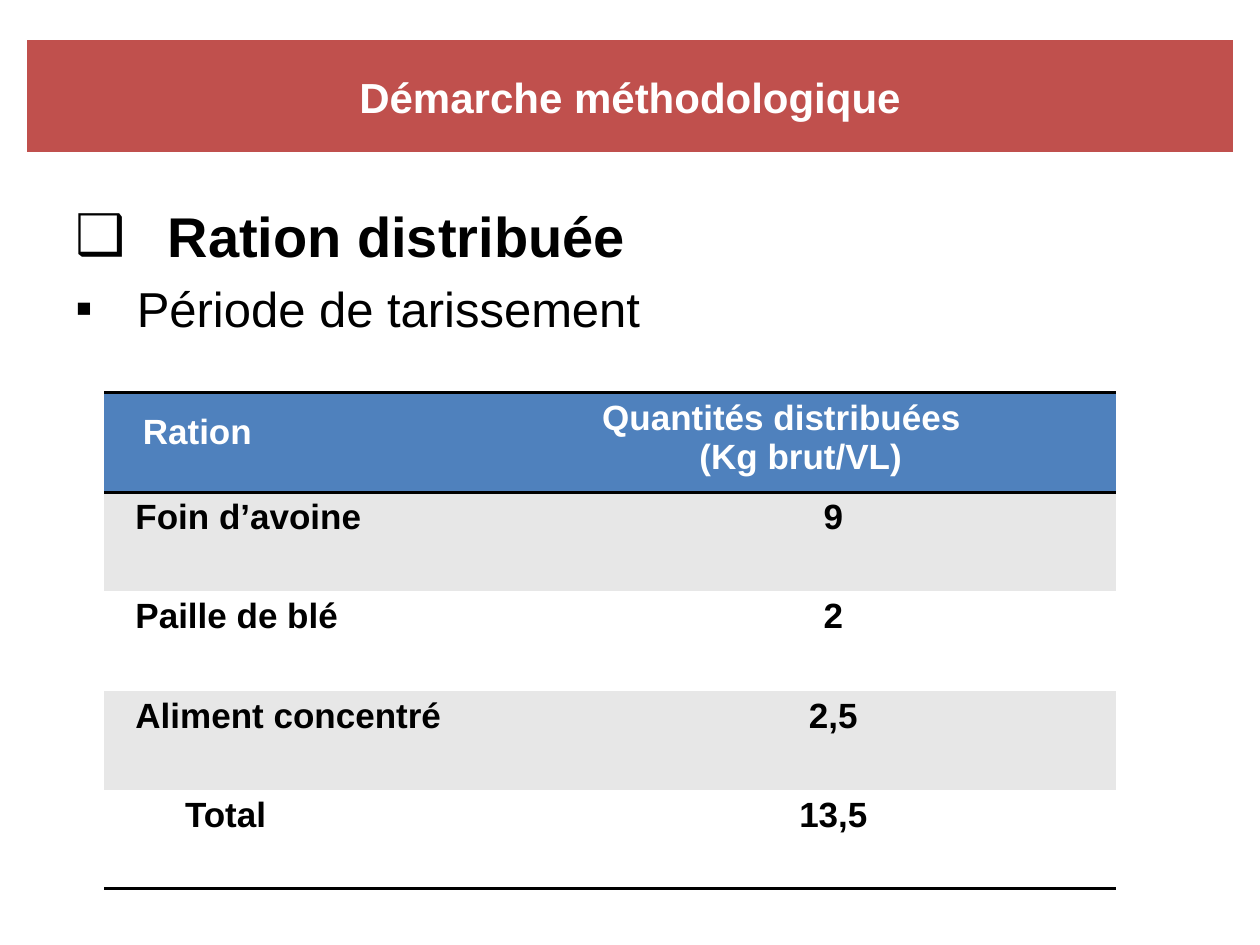
from lxml import etree
from pptx import Presentation
from pptx.dml.color import RGBColor
from pptx.enum.text import MSO_ANCHOR, PP_ALIGN
from pptx.oxml.ns import qn
from pptx.util import Cm, Pt

LEFT, CENTER = PP_ALIGN.LEFT, PP_ALIGN.CENTER
MIDDLE = MSO_ANCHOR.MIDDLE
TITLE_ONLY = 5
FONT = "Arial"
COLORS = {
    "banner": "C0504D",
    "header": "4F81BD",
    "band": "E7E7E7",
    "white": "FFFFFF",
    "black": "000000",
}

# Each ration row: name, its indent in cm, quantity
RATIONS = [
    ("Foin d’avoine", 0.45, "9"),
    ("Paille de blé", 0.45, "2"),
    ("Aliment concentré", 0.45, "2,5"),
    ("Total", 1.45, "13,5"),
]


def color(name):
    return RGBColor.from_string(COLORS[name])


def add_node(parent, tag, **attributes):
    return etree.SubElement(parent, qn(tag), attributes)


def add_color(parent, name):
    fill = add_node(parent, "a:solidFill")
    return add_node(fill, "a:srgbClr", val=COLORS[name])


def place(shape, box):
    shape.left, shape.top, shape.width, shape.height = (Cm(value) for value in box)


def format_para(para, size, color_name, bold=True, align=LEFT):
    para.alignment = align
    for span in para.runs:
        span.font.name = FONT
        span.font.size = Pt(size)
        span.font.bold = bold
        span.font.color.rgb = color(color_name)


def indent_para(para, indent, hanging=0):
    properties = para._p.get_or_add_pPr()
    properties.set("marL", str(Cm(indent)))
    properties.set("indent", str(-Cm(hanging)))
    return properties


def fill_banner(title, box):
    place(title, box)
    title.fill.solid()
    title.fill.fore_color.rgb = color("banner")
    title.line.color.rgb = color("white")
    title.line.width = Pt(3)
    effects = add_node(title._element.spPr, "a:effectLst")
    shadow = add_node(effects, "a:outerShdw", blurRad=str(Pt(3.1)),
                      dist=str(Pt(1.6)), dir="5400000", rotWithShape="0")
    add_node(add_color(shadow, "black"), "a:alpha", val="38000")
    frame = title.text_frame
    frame.text = "Démarche méthodologique"
    frame.vertical_anchor = MIDDLE
    format_para(frame.paragraphs[0], 24, "white", align=CENTER)


def add_headings(page, box):
    frame = page.shapes.add_textbox(*(Cm(value) for value in box)).text_frame
    frame.word_wrap = True
    frame.text = "Ration distribuée\nPériode de tarissement"
    styles = [("❑", 32, True, 1.86), ("▪", 28, False, 1.24)]
    for para, (bullet, size, bold, indent) in zip(frame.paragraphs, styles):
        format_para(para, size, "black", bold)
        para.space_before = Pt(size * 0.2)
        properties = indent_para(para, indent, indent)
        add_node(properties, "a:buFont", typeface=FONT)
        add_node(properties, "a:buChar", char=bullet)


def set_borders(cell, ruled_sides):
    properties = cell._tc.get_or_add_tcPr()
    for position, side in enumerate(("L", "R", "T", "B")):
        line = etree.Element(qn("a:ln" + side), w=str(Pt(2)))
        if side in ruled_sides:
            add_color(line, "black")
        else:
            add_node(line, "a:noFill")
        properties.insert(position, line)


def fill_cell(cell, text, fill, text_color, indents=(0,), align=LEFT, borders=""):
    cell.fill.solid()
    cell.fill.fore_color.rgb = color(fill)
    cell.margin_left = cell.margin_right = Cm(0.18)
    cell.margin_top, cell.margin_bottom = Cm(0.12), 0
    cell.text = text
    for para, indent in zip(cell.text_frame.paragraphs, indents):
        format_para(para, 20, text_color, align=align)
        indent_para(para, indent)
    set_borders(cell, borders)


def add_ration_table(page, box):
    row_count = len(RATIONS) + 1
    table = page.shapes.add_table(row_count, 2, *(Cm(value) for value in box)).table
    table.columns[0].width = Cm(9)
    table.columns[1].width = Cm(box[2] - 9)

    # Header row
    fill_cell(table.cell(0, 0), "Ration", "header", "white", [0.6], borders="TB")
    table.cell(0, 0).margin_top = 0
    table.cell(0, 0).text_frame.paragraphs[0].line_spacing = 1.5
    fill_cell(table.cell(0, 1), "Quantités distribuées\n(Kg brut/VL)",
              "header", "white", [0.86, 2.82], borders="TB")

    # Banded ration rows
    for row, (name, indent, quantity) in enumerate(RATIONS, start=1):
        fill = "band" if row % 2 else "white"
        borders = {1: "T", row_count - 1: "B"}.get(row, "")
        fill_cell(table.cell(row, 0), name, fill, "black", [indent], borders=borders)
        fill_cell(table.cell(row, 1), quantity, fill, "black",
                  align=CENTER, borders=borders)


def main():
    deck = Presentation()
    deck.slide_width, deck.slide_height = Cm(25.4), Cm(19.05)
    page = deck.slides.add_slide(deck.slide_layouts[TITLE_ONLY])
    fill_banner(page.shapes.title, (0.5, 0.76, 24.4, 2.36))
    add_headings(page, (1.27, 3.94, 22.86, 14.2))
    add_ration_table(page, (2.1, 7.92, 20.4, 10))
    deck.save("out.pptx")


if __name__ == "__main__":
    main()
